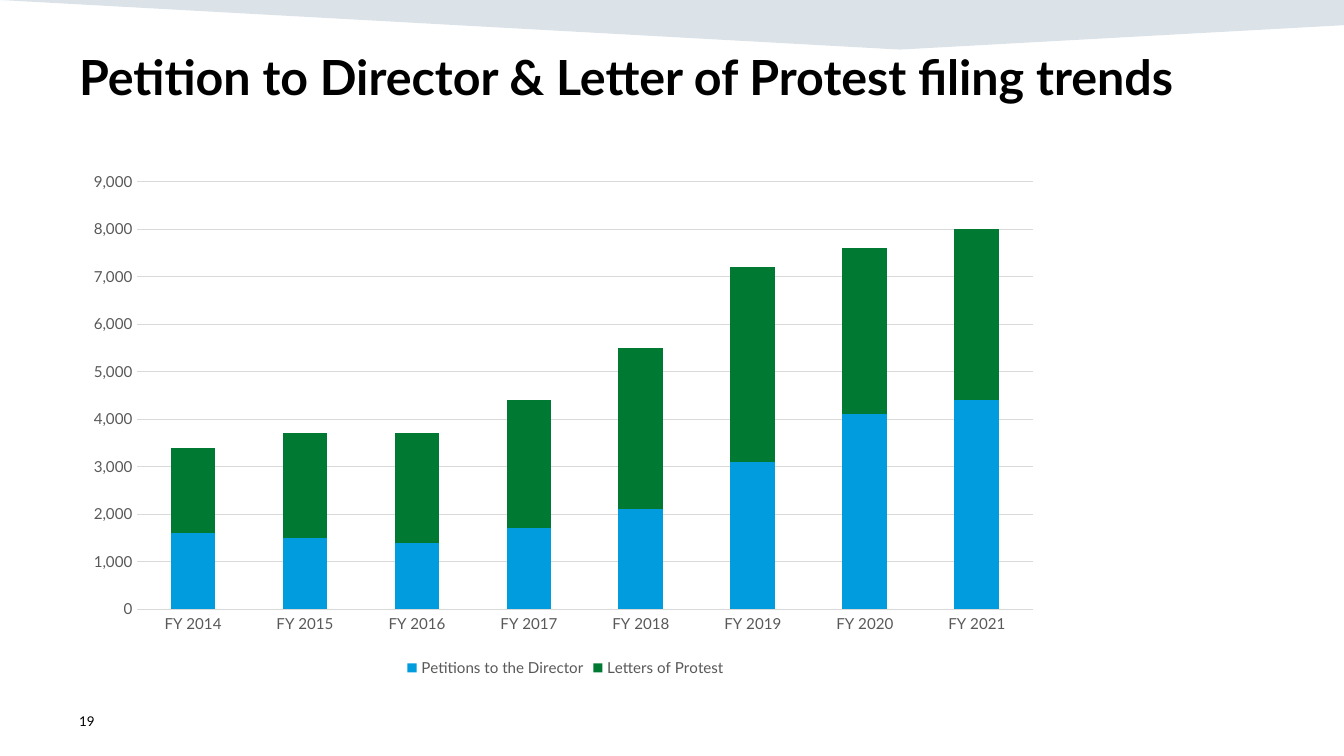
from dataclasses import dataclass
from lxml import etree
from pptx import Presentation
from pptx import util as u
from pptx.chart import data as cd
from pptx.dml.color import RGBColor
from pptx.enum import chart as ec, text as et
from pptx.oxml import ns


@dataclass(frozen=True)
class Theme:
    font: str = "Lato"
    ink: str = "000000"
    gray: str = "595959"
    rule: str = "D9D9D9"
    band: str = "164469"
    alpha: int = 15
    head: float = 28.8
    label: float = 9
    foot: float = 8


@dataclass(frozen=True)
class Box:
    left: float
    top: float
    width: float
    height: float

    def pts(self) -> list:
        return [u.Pt(n) for n in (self.left, self.top, self.width, self.height)]


@dataclass(frozen=True)
class Label:
    box: Box
    words: str
    size: float
    bold: bool
    anchor: et.MSO_ANCHOR


@dataclass(frozen=True)
class Series:
    name: str
    color: str
    counts: tuple


THEME = Theme()
WIDE, HIGH = 800, 450
BAND = ((0, 0), (WIDE, 0), (WIDE, 15), (535.7, 29.5))
LABELS = (
    Label(Box(40, 24.5, 727, 68.4), "Petition to Director & Letter of Protest filing trends",
          THEME.head, True, et.MSO_ANCHOR.TOP),
    Label(Box(40, 417, 180, 24), "19", THEME.foot, False, et.MSO_ANCHOR.MIDDLE),
)
FRAME = Box(46.8, 95.8, 579.6, 310.3)
PLOT = {"x": 0.06, "y": 0.04, "w": 0.92, "h": 0.82}
YEARS = [f"FY {year}" for year in range(2014, 2022)]
FILINGS = (
    Series("Petitions to the Director", "009CDE",
           (1600, 1500, 1400, 1700, 2100, 3100, 4100, 4400)),
    Series("Letters of Protest", "007A33",
           (1800, 2200, 2300, 2700, 3400, 4100, 3500, 3600)),
)


def rgb(code: str) -> RGBColor:
    return RGBColor.from_string(code)


def style(font, size: float, color: str, bold: bool = False) -> None:
    font.name, font.size, font.bold = THEME.font, u.Pt(size), bold
    font.color.rgb = rgb(color)


def rule(line) -> None:
    line.color.rgb = rgb(THEME.rule)
    line.width = u.Pt(0.75)


def draw_band(slide) -> None:
    first, *rest = [(u.Pt(x), u.Pt(y)) for x, y in BAND]
    pen = slide.shapes.build_freeform(*first)
    pen.add_line_segments(rest, close=True)
    band = pen.convert_to_shape()
    band.shadow.inherit = False
    band.line.fill.background()
    band.fill.solid()
    band.fill.fore_color.rgb = rgb(THEME.band)
    tint = band.element.spPr.find(".//" + ns.qn("a:srgbClr"))
    etree.SubElement(tint, ns.qn("a:alpha")).set("val", str(THEME.alpha * 1000))


def draw_label(slide, label: Label) -> None:
    frame = slide.shapes.add_textbox(*label.box.pts()).text_frame
    frame.word_wrap = True
    frame.vertical_anchor = label.anchor
    run = frame.paragraphs[0].add_run()
    run.text = label.words
    style(run.font, label.size, THEME.ink, label.bold)


def place_plot(chart) -> None:
    area = chart.element.find(".//" + ns.qn("c:plotArea"))
    for old in area.findall(ns.qn("c:layout")):
        area.remove(old)
    layout = etree.Element(ns.qn("c:layout"))
    area.insert(0, layout)
    manual = etree.SubElement(layout, ns.qn("c:manualLayout"))
    rules = {"layoutTarget": "inner", "xMode": "edge", "yMode": "edge", **PLOT}
    for tag, value in rules.items():
        etree.SubElement(manual, ns.qn("c:" + tag)).set("val", str(value))


def draw_chart(slide) -> None:
    data = cd.CategoryChartData(number_format="#,##0")
    data.categories = YEARS
    for item in FILINGS:
        data.add_series(item.name, item.counts)
    chart = slide.shapes.add_chart(
        ec.XL_CHART_TYPE.COLUMN_STACKED, *FRAME.pts(), data).chart
    chart.has_title = False
    style(chart.font, THEME.label, THEME.gray)

    # Stacked columns
    plot = chart.plots[0]
    plot.gap_width, plot.overlap, plot.vary_by_categories = 150, 100, False
    for bars, item in zip(plot.series, FILINGS):
        bars.format.fill.solid()
        bars.format.fill.fore_color.rgb = rgb(item.color)

    # Axes and grid
    years, counts = chart.category_axis, chart.value_axis
    for axis in (years, counts):
        axis.major_tick_mark = axis.minor_tick_mark = ec.XL_TICK_MARK.NONE
        style(axis.tick_labels.font, THEME.label, THEME.gray)
    rule(years.format.line)
    counts.format.line.fill.background()
    counts.minimum_scale, counts.maximum_scale, counts.major_unit = 0, 9000, 1000
    counts.tick_labels.number_format = "#,##0"
    counts.tick_labels.number_format_is_linked = False
    counts.has_major_gridlines = True
    rule(counts.major_gridlines.format.line)

    # Legend
    chart.has_legend = True
    chart.legend.position = ec.XL_LEGEND_POSITION.BOTTOM
    chart.legend.include_in_layout = False
    style(chart.legend.font, THEME.label, THEME.gray)
    place_plot(chart)


def main() -> None:
    deck = Presentation()
    deck.slide_width, deck.slide_height = u.Pt(WIDE), u.Pt(HIGH)
    slide = deck.slides.add_slide(deck.slide_layouts[6])
    draw_band(slide)
    for label in LABELS:
        draw_label(slide, label)
    draw_chart(slide)
    deck.save("out.pptx")


if __name__ == "__main__":
    main()
